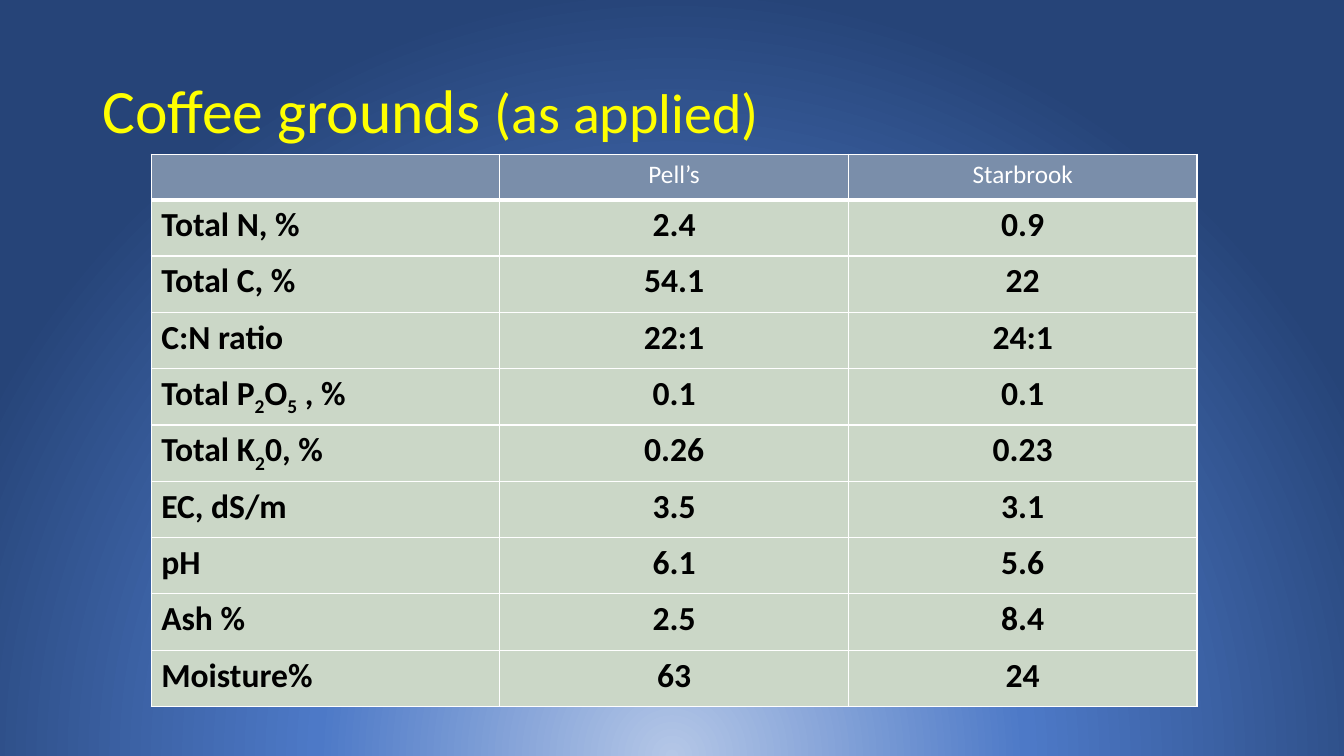
from dataclasses import dataclass

from pptx import Presentation, oxml
from pptx.dml.color import RGBColor
from pptx.enum import text
from pptx.oxml import ns
from pptx.util import Pt


@dataclass(frozen=True)
class Theme:
    font: str = "Calibri"
    title: str = "FFFF00"
    header_fill: str = "7A8EAA"
    header_text: str = "FFFFFF"
    body_fill: str = "CBD7C7"
    body_text: str = "000000"
    border: str = "FFFFFF"
    backdrop: tuple = ((0, "B4C7E7"), (46, "4D79C7"), (100, "264478"))
    title_size: int = 44
    subtitle_size: int = 40
    header_size: int = 18
    body_size: int = 24


theme = Theme()


def style(span, size, color, bold=False):
    span.font.name = theme.font
    span.font.size = Pt(size)
    span.font.bold = bold
    span.font.color.rgb = RGBColor.from_string(color)


def add_border(cell, side, width):
    """Draw one edge of a cell; side is L, R, T or B. Call before filling the cell."""
    cell._tc.get_or_add_tcPr().append(oxml.parse_xml(
        f'<a:ln{side} {ns.nsdecls("a")} w="{Pt(width)}"><a:solidFill>'
        f'<a:srgbClr val="{theme.border}"/></a:solidFill></a:ln{side}>'))


deck = Presentation()
deck.slide_width, deck.slide_height = Pt(960), Pt(540)
page = deck.slides.add_slide(deck.slide_layouts[5])

# Radial background, centred below the bottom edge
page.background.fill.gradient()
linear = page._element.find(".//" + ns.qn("a:gradFill"))
stops = "".join(f'<a:gs pos="{place * 1000}"><a:srgbClr val="{color}"/></a:gs>'
                for place, color in theme.backdrop)
radial = oxml.parse_xml(
    f'<a:gradFill {ns.nsdecls("a")} rotWithShape="1"><a:gsLst>{stops}</a:gsLst>'
    '<a:path path="circle"><a:fillToRect l="50000" t="130000" r="50000" b="-30000"/>'
    '</a:path></a:gradFill>')
linear.getparent().replace(linear, radial)

# Title
title = page.shapes.title
title.left, title.top, title.width, title.height = Pt(66), Pt(28.75), Pt(828), Pt(104.4)
frame = title.text_frame
frame.word_wrap = True
frame.auto_size = text.MSO_AUTO_SIZE.NONE
frame.vertical_anchor = text.MSO_ANCHOR.MIDDLE
heading = frame.paragraphs[0]
heading.alignment = text.PP_ALIGN.LEFT
heading.line_spacing = 0.9
for words, size in (("Coffee grounds ", theme.title_size),
                    ("(as applied)", theme.subtitle_size)):
    span = heading.add_run()
    span.text = words
    style(span, size, theme.title)

# Analysis table; bars in a label enclose subscripts
rows = [
    ("", "Pell’s", "Starbrook"),
    ("Total N, %", "2.4", "0.9"),
    ("Total C, %", "54.1", "22"),
    ("C:N ratio", "22:1", "24:1"),
    ("Total P|2|O|5| , %", "0.1", "0.1"),
    ("Total K|2|0, %", "0.26", "0.23"),
    ("EC, dS/m", "3.5", "3.1"),
    ("pH", "6.1", "5.6"),
    ("Ash %", "2.5", "8.4"),
    ("Moisture%", "63", "24"),
]
header_height, row_height, column_width = 32.4, 40.25, 249
table = page.shapes.add_table(
    len(rows), 3, Pt(108), Pt(110.2), Pt(3 * column_width),
    Pt(header_height + row_height * (len(rows) - 1))).table
for column in table.columns:
    column.width = Pt(column_width)

for row_index, values in enumerate(rows):
    is_header = row_index == 0
    table.rows[row_index].height = Pt(header_height if is_header else row_height)
    size = theme.header_size if is_header else theme.body_size
    color = theme.header_text if is_header else theme.body_text
    for column_index, value in enumerate(values):
        cell = table.cell(row_index, column_index)
        for side in "LRTB":
            under_header = (row_index, side) in ((0, "B"), (1, "T"))
            add_border(cell, side, 3 if under_header else 1)
        cell.fill.solid()
        cell.fill.fore_color.rgb = RGBColor.from_string(
            theme.header_fill if is_header else theme.body_fill)
        para = cell.text_frame.paragraphs[0]
        para.alignment = text.PP_ALIGN.CENTER if column_index else text.PP_ALIGN.LEFT
        if not value:
            para.font.size = Pt(size)
            continue
        for part_index, part in enumerate(value.split("|")):
            span = para.add_run()
            span.text = part
            style(span, size, color, bold=not is_header)
            if part_index % 2:
                span._r.get_or_add_rPr().set("baseline", "-25000")

deck.save("out.pptx")
